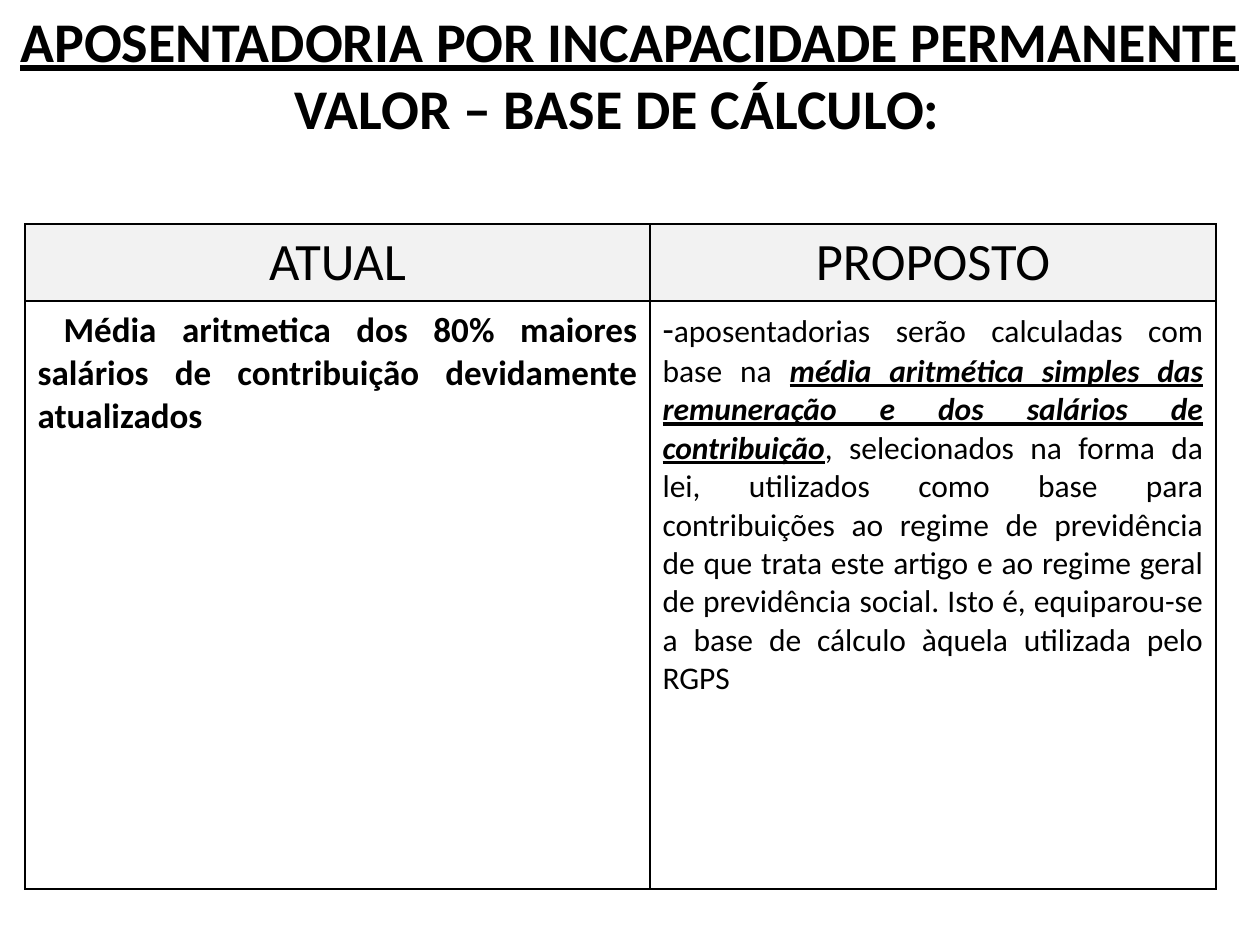
from dataclasses import dataclass

from lxml.etree import SubElement
from pptx import Presentation
from pptx.dml.color import RGBColor
from pptx.enum.text import MSO_ANCHOR, PP_ALIGN
from pptx.oxml.ns import qn
from pptx.util import Pt

EMU_PER_PIXEL = 914400 / 126
FONT = "Calibri"
BLACK = "000000"
WHITE = "FFFFFF"
HEADER_GRAY = "F2F2F2"


@dataclass(frozen=True)
class TextRun:
    text: str
    size: int
    bold: bool = False
    italic: bool = False
    underline: bool = False


@dataclass(frozen=True)
class CellContent:
    runs: tuple[TextRun, ...]
    alignment: PP_ALIGN
    fill: str


def px(length: int) -> int:
    return round(length * EMU_PER_PIXEL)


def color(value: str) -> RGBColor:
    return RGBColor.from_string(value)


def write_runs(paragraph, runs: tuple[TextRun, ...], alignment: PP_ALIGN) -> None:
    paragraph.alignment = alignment
    for item in runs:
        run = paragraph.add_run()
        run.text = item.text
        run.font.name = FONT
        run.font.size = Pt(item.size)
        run.font.bold = item.bold
        run.font.italic = item.italic
        run.font.underline = item.underline
        run.font.color.rgb = color(BLACK)


def add_borders(cell) -> None:
    properties = cell._tc.get_or_add_tcPr()
    for position, side in enumerate(("lnL", "lnR", "lnT", "lnB")):
        line = SubElement(properties, qn(f"a:{side}"), w=str(Pt(1)))
        fill = SubElement(line, qn("a:solidFill"))
        SubElement(fill, qn("a:srgbClr"), val=BLACK)
        properties.insert(position, line)


def fill_cell(cell, content: CellContent) -> None:
    cell.fill.solid()
    cell.fill.fore_color.rgb = color(content.fill)
    cell.vertical_anchor = MSO_ANCHOR.TOP
    add_borders(cell)
    write_runs(cell.text_frame.paragraphs[0], content.runs, content.alignment)


def header(text: str) -> CellContent:
    return CellContent((TextRun(text, 30),), PP_ALIGN.CENTER, HEADER_GRAY)


def body(*runs: TextRun) -> CellContent:
    return CellContent(runs, PP_ALIGN.JUSTIFY, WHITE)


TITLE = (
    TextRun("APOSENTADORIA POR INCAPACIDADE PERMANENTE ", 32, bold=True, underline=True),
    TextRun("VALOR – BASE DE CÁLCULO:  ", 32, bold=True),
)
COLUMN_WIDTHS = (625, 566)
ROW_HEIGHTS = (77, 588)
ROWS = (
    (header("ATUAL"), header("PROPOSTO")),
    (
        body(
            TextRun(" ", 21),
            TextRun(
                "Média aritmetica dos 80% maiores salários de contribuição "
                "devidamente atualizados",
                20,
                bold=True,
            ),
        ),
        body(
            TextRun("-", 21),
            TextRun("aposentadorias serão calculadas com base na ", 18),
            TextRun(
                "média aritmética simples das remuneração e dos salários de contribuição",
                18,
                bold=True,
                italic=True,
                underline=True,
            ),
            TextRun(
                ", selecionados na forma da lei, utilizados como base para "
                "contribuições ao regime de previdência de que trata este artigo "
                "e ao regime geral de previdência social. Isto é, equiparou-se a "
                "base de cálculo àquela utilizada pelo RGPS",
                18,
            ),
        ),
    ),
)


def add_title(slide) -> None:
    text_box = slide.shapes.add_textbox(0, 0, px(1260), px(929))
    text_box.text_frame.word_wrap = True
    paragraph = text_box.text_frame.paragraphs[0]
    paragraph.space_before = Pt(6.4)
    write_runs(paragraph, TITLE, PP_ALIGN.CENTER)


def add_comparison(slide) -> None:
    table = slide.shapes.add_table(
        len(ROWS), len(COLUMN_WIDTHS),
        px(25), px(224), px(sum(COLUMN_WIDTHS)), px(sum(ROW_HEIGHTS)),
    ).table
    table.horz_banding = False
    for column, width in zip(table.columns, COLUMN_WIDTHS):
        column.width = px(width)
    for row, height, contents in zip(table.rows, ROW_HEIGHTS, ROWS):
        row.height = px(height)
        for cell, content in zip(row.cells, contents):
            fill_cell(cell, content)


def main() -> None:
    presentation = Presentation()
    presentation.slide_width = px(1260)
    presentation.slide_height = px(945)
    slide = presentation.slides.add_slide(presentation.slide_layouts[6])
    add_title(slide)
    add_comparison(slide)
    presentation.save("out.pptx")


if __name__ == "__main__":
    main()
